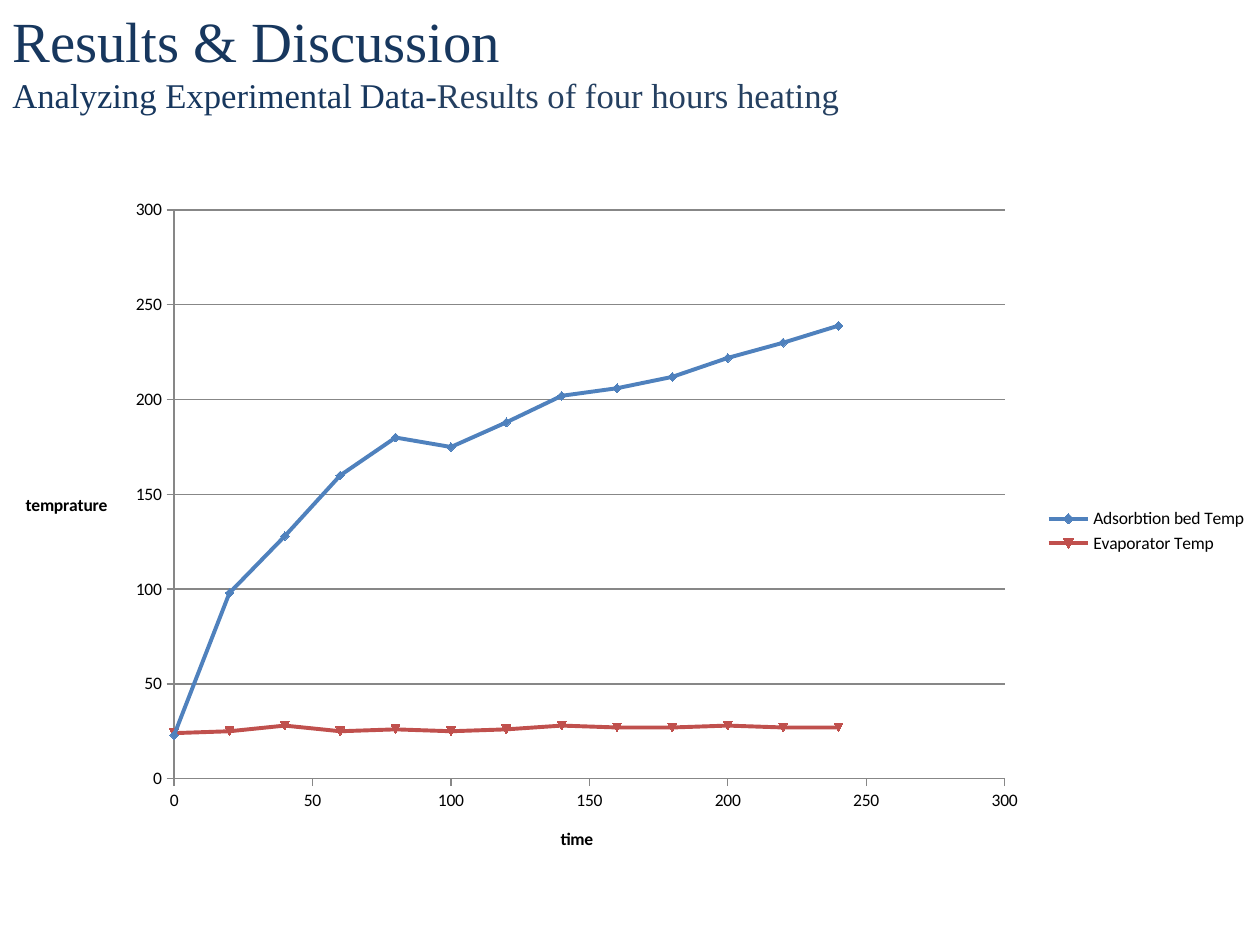
from dataclasses import dataclass

from pptx import Presentation
from pptx import util as u
from pptx.chart.data import XyChartData
from pptx.dml.color import RGBColor
from pptx.enum import chart as kinds, text


@dataclass(frozen=True)
class Theme:
    title_font: str = "Times New Roman"
    chart_font: str = "Calibri"
    navy: str = "17375E"
    slate: str = "254061"
    black: str = "000000"
    grid: str = "878787"
    blue: str = "4F81BD"
    red: str = "C0504D"
    title_size: float = 32.4
    subtitle_size: float = 19.8
    gap_size: float = 18
    chart_size: float = 10
    grid_width: float = 0.75
    series_width: float = 2.25


class SlideBuilder:
    def __init__(self, page, theme):
        self.page = page
        self.theme = theme

    def style(self, font, name, size, color, bold=False):
        font.name = name
        font.size = u.Pt(size)
        font.bold = bold
        font.color.rgb = RGBColor.from_string(color)

    def stroke(self, line, color, width):
        line.color.rgb = RGBColor.from_string(color)
        line.width = u.Pt(width)

    def heading(self, lines, left, top, width, height):
        box = self.page.shapes.add_textbox(
            u.Inches(left), u.Inches(top), u.Inches(width), u.Inches(height))
        frame = box.text_frame
        frame.word_wrap = True
        frame.vertical_anchor = text.MSO_ANCHOR.TOP
        para = frame.paragraphs[0]
        para.font.name = self.theme.title_font
        for index, line in enumerate(lines):
            if index:
                para.add_line_break()
            for words, size, color in line:
                span = para.add_run()
                span.text = words
                self.style(span.font, self.theme.title_font, size, color)

    def axis(self, axis, title, maximum, step, gridlines):
        theme = self.theme
        axis.minimum_scale, axis.maximum_scale = 0, maximum
        axis.major_unit = step
        axis.major_tick_mark = kinds.XL_TICK_MARK.OUTSIDE
        axis.minor_tick_mark = kinds.XL_TICK_MARK.NONE
        axis.has_major_gridlines = gridlines
        self.stroke(axis.format.line, theme.grid, theme.grid_width)
        if gridlines:
            self.stroke(axis.major_gridlines.format.line, theme.grid, theme.grid_width)
        frame = axis.axis_title.text_frame
        frame.text = title
        self.style(frame.paragraphs[0].font, theme.chart_font, theme.chart_size,
                   theme.black, bold=True)
        body = frame._txBody.bodyPr
        body.set("rot", "0")
        body.set("vert", "horz")

    def scatter(self, times, readings, left, top, width, height):
        theme = self.theme
        data = XyChartData()
        for name, temperatures, _ in readings:
            series = data.add_series(name)
            for time, temperature in zip(times, temperatures):
                series.add_data_point(time, temperature)
        chart = self.page.shapes.add_chart(
            kinds.XL_CHART_TYPE.XY_SCATTER_LINES, u.Inches(left), u.Inches(top),
            u.Inches(width), u.Inches(height), data).chart
        self.style(chart.font, theme.chart_font, theme.chart_size, theme.black)
        chart.has_title = False
        chart.has_legend = True
        chart.legend.position = kinds.XL_LEGEND_POSITION.RIGHT
        chart.legend.include_in_layout = False
        chart.plots[0].vary_by_categories = False
        for series, (_, _, color) in zip(chart.plots[0].series, readings):
            series.smooth = False
            self.stroke(series.format.line, color, theme.series_width)
        self.axis(chart.category_axis, "time", 300, 50, gridlines=False)
        self.axis(chart.value_axis, "temprature", 300, 50, gridlines=True)


def main():
    deck = Presentation()
    deck.slide_width, deck.slide_height = u.Inches(10), u.Inches(7.5)
    theme = Theme()
    builder = SlideBuilder(deck.slides.add_slide(deck.slide_layouts[6]), theme)

    builder.heading([
        [("Results & Discussion", theme.title_size, theme.navy)],
        [("Analyzing Experimental", theme.subtitle_size, theme.navy),
         (" ", theme.gap_size, theme.navy),
         ("Data-", theme.subtitle_size, theme.navy),
         ("Results of four hours heating", theme.subtitle_size, theme.slate)],
    ], 0, 0, 9, 1.25)

    builder.scatter(range(0, 241, 20), [
        ("Adsorbtion bed Temp",
         [23, 98, 128, 160, 180, 175, 188, 202, 206, 212, 222, 230, 239], theme.blue),
        ("Evaporator Temp",
         [24, 25, 28, 25, 26, 25, 26, 28, 27, 27, 28, 27, 27], theme.red),
    ], 0, 1.48, 10, 5.47)

    deck.save("out.pptx")


if __name__ == "__main__":
    main()
